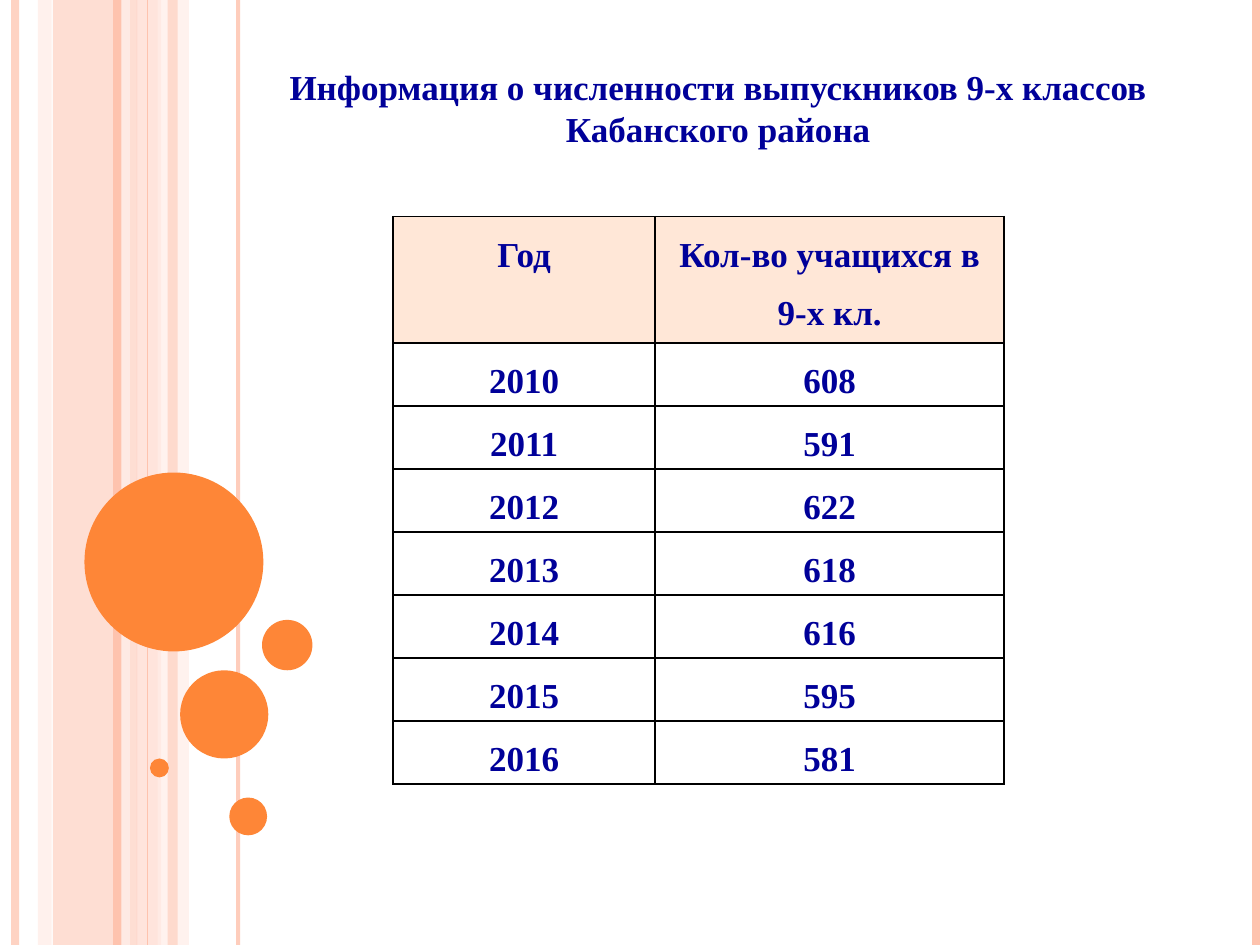
import pptx
import pptx.util
import pptx.dml.color
import pptx.enum.shapes
import pptx.enum.text
import pptx.oxml.ns
from lxml import etree

Inches, Pt = pptx.util.Inches, pptx.util.Pt
RGBColor = pptx.dml.color.RGBColor
SHAPE = pptx.enum.shapes.MSO_SHAPE
CENTER = pptx.enum.text.PP_ALIGN.CENTER
qn = pptx.oxml.ns.qn

PEACH = RGBColor(0xFE, 0xC3, 0xAE)
PINK = RGBColor(0xFF, 0xD9, 0xCE)
PALE = RGBColor(0xFF, 0xED, 0xE8)
ORANGE = RGBColor(0xFE, 0x86, 0x37)
HEADER = RGBColor(0xFF, 0xE7, 0xD7)
NAVY = RGBColor(0x00, 0x00, 0x99)
BLACK = RGBColor(0, 0, 0)

FONT = "Times New Roman"
WIDTH, HEIGHT = 10, 7.5

TITLE = ["Информация о численности выпускников 9-х классов", "Кабанского района"]
ROWS = [
    ("Год", "Кол-во учащихся в 9-х кл."),
    ("2010", "608"),
    ("2011", "591"),
    ("2012", "622"),
    ("2013", "618"),
    ("2014", "616"),
    ("2015", "595"),
    ("2016", "581"),
]
COL_WIDTHS = (2.08, 2.77)
HEADER_HEIGHT, ROW_HEIGHT = 1, 0.5

# left, width, colour, opacity
BACK_BANDS = [
    (0.42, 0.67, PEACH, 54),
    (0.3, 0.11, PINK, 36),
    (1.08, 0.2, PINK, 70),
    (1.25, 0.25, PALE, 71),
]
FRONT_BANDS = [(1.33, 0.08, PEACH, 51)]
STRIPES = [
    (0.12, 4.5, PEACH, 73),
    (1, 4.5, PALE, 83),
    (0.93, 4.5, PEACH, 100),
    (1.89, 2.25, PEACH, 82),
    (1.17, 0.75, PEACH, 100),
    (9.97, 4.5, PEACH, 100),
]
CIRCLES = [
    (0.67, 3.75, 1.42),
    (1.43, 5.32, 0.7),
    (1.19, 6.02, 0.15),
    (1.82, 6.33, 0.3),
    (2.08, 4.92, 0.4),
]


def set_opacity(sp, percent):
    if percent < 100:
        color = sp._element.spPr.find(".//" + qn("a:srgbClr"))
        etree.SubElement(color, qn("a:alpha"), val=str(percent * 1000))


def add_plain_shape(s, kind, left, top, width, height, color, opacity=100):
    sp = s.shapes.add_shape(kind, Inches(left), Inches(top), Inches(width), Inches(height))
    sp.shadow.inherit = False
    sp.fill.solid()
    sp.fill.fore_color.rgb = color
    sp.line.fill.background()
    set_opacity(sp, opacity)


def add_bands(s, bands):
    for left, width, color, opacity in bands:
        add_plain_shape(s, SHAPE.RECTANGLE, left, 0, width, HEIGHT, color, opacity)


def add_stripe(s, x, weight, color, opacity):
    line = s.shapes.add_connector(
        pptx.enum.shapes.MSO_CONNECTOR.STRAIGHT, Inches(x), 0, Inches(x), Inches(HEIGHT))
    line.line.color.rgb = color
    line.line.width = Pt(weight)
    set_opacity(line, opacity)
    etree.SubElement(line._element.spPr, qn("a:effectLst"))


def format_text(tf):
    for p in tf.paragraphs:
        p.alignment = CENTER
        for r in p.runs:
            r.font.name = FONT
            r.font.size = Pt(20)
            r.font.bold = True
            r.font.color.rgb = NAVY


def add_borders(cell):
    tcPr = cell._tc.get_or_add_tcPr()
    for side in ("a:lnL", "a:lnR", "a:lnT", "a:lnB"):
        ln = etree.SubElement(tcPr, qn(side), w=str(Pt(1)))
        fill = etree.SubElement(ln, qn("a:solidFill"))
        etree.SubElement(fill, qn("a:srgbClr"), val=str(BLACK))


def add_title(s):
    tf = s.shapes.add_textbox(Inches(2.03), Inches(0.47), Inches(7.34), Inches(0.77)).text_frame
    tf.word_wrap = True
    tf.text = "\n".join(TITLE)
    format_text(tf)


def add_graduates_table(s):
    height = HEADER_HEIGHT + ROW_HEIGHT * (len(ROWS) - 1)
    table = s.shapes.add_table(
        len(ROWS), len(COL_WIDTHS), Inches(3.12), Inches(1.72),
        Inches(sum(COL_WIDTHS)), Inches(height)).table
    table.first_row = table.horz_banding = False
    for column, width in zip(table.columns, COL_WIDTHS):
        column.width = Inches(width)
    for i, values in enumerate(ROWS):
        table.rows[i].height = Inches(ROW_HEIGHT if i else HEADER_HEIGHT)
        for j, value in enumerate(values):
            cell = table.cell(i, j)
            cell.margin_left = cell.margin_right = Inches(0.07)
            cell.margin_top = cell.margin_bottom = 0
            add_borders(cell)
            if i:
                cell.fill.background()
            else:
                cell.fill.solid()
                cell.fill.fore_color.rgb = HEADER
            cell.text_frame.text = value
            cell.text_frame.paragraphs[0].line_spacing = 1.5
            format_text(cell.text_frame)


def main():
    prs = pptx.Presentation()
    prs.slide_width, prs.slide_height = Inches(WIDTH), Inches(HEIGHT)
    s = prs.slides.add_slide(prs.slide_layouts[6])
    add_bands(s, BACK_BANDS)
    for stripe in STRIPES:
        add_stripe(s, *stripe)
    add_bands(s, FRONT_BANDS)
    for left, top, size in CIRCLES:
        add_plain_shape(s, SHAPE.OVAL, left, top, size, size, ORANGE)
    add_title(s)
    add_graduates_table(s)
    prs.save("out.pptx")


if __name__ == "__main__":
    main()
